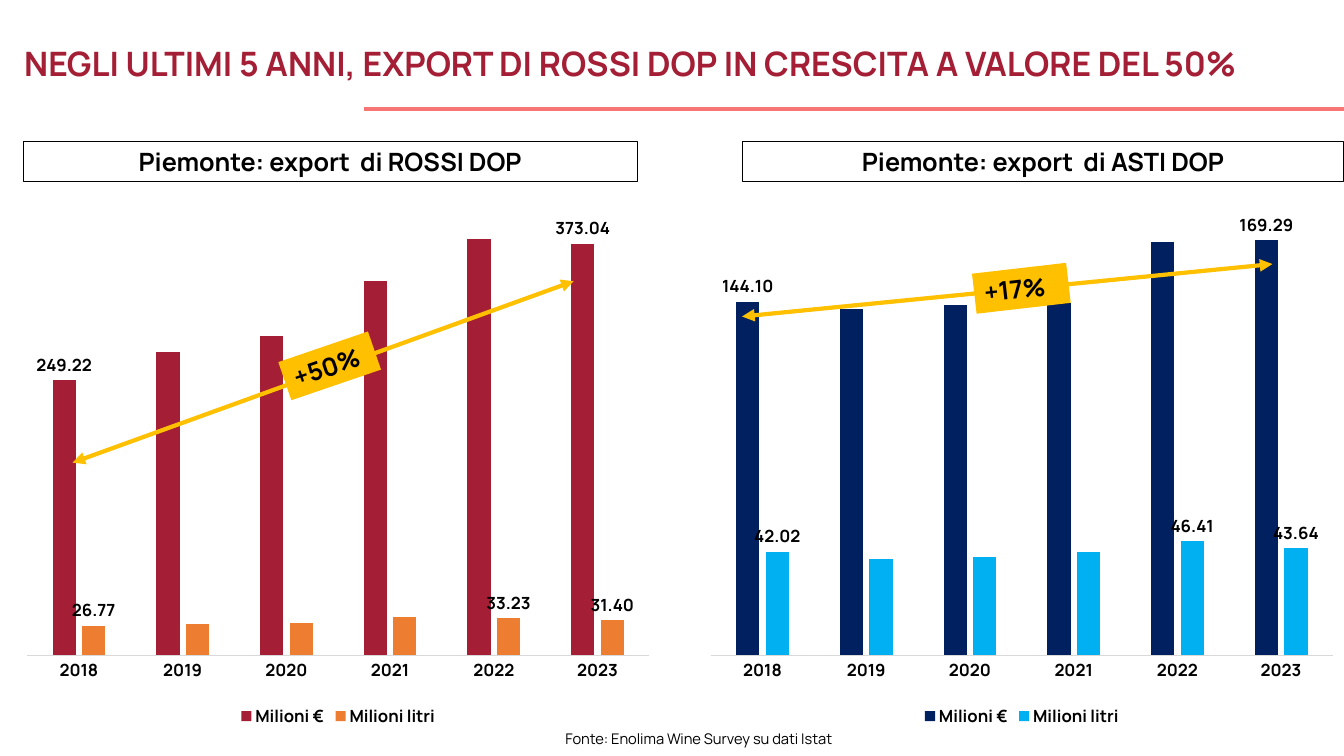
"""Build the slide comparing exports of Piedmont red and Asti DOP wines."""
from lxml.etree import SubElement, fromstring
from pptx import Presentation
from pptx.chart.data import CategoryChartData
from pptx.dml.color import RGBColor
from pptx.enum.chart import XL_CHART_TYPE as CT, XL_LABEL_POSITION as LP
from pptx.enum.chart import XL_LEGEND_POSITION as LegendPos, XL_TICK_MARK as Tick
from pptx.enum.shapes import MSO_CONNECTOR as Conn, MSO_SHAPE as Shape
from pptx.enum.text import MSO_ANCHOR as Anchor, PP_ALIGN as Align
from pptx.oxml.ns import qn
from pptx.util import Inches, Pt

COLORS = {"red": "A41F35", "orange": "ED7D31", "navy": "002060", "sky": "00B0F0",
          "rose": "F87575", "gold": "FFC000", "black": "000000", "grey": "D9D9D9"}
FONT = "Manrope"
TITLE = "NEGLI ULTIMI 5 ANNI, EXPORT DI ROSSI DOP IN CRESCITA A VALORE DEL 50%"
SOURCE = "Fonte: Enolima Wine Survey su dati Istat"
YEARS = ["2018", "2019", "2020", "2021", "2022", "2023"]
NAMES = ["Milioni €", "Milioni litri"]
LABELLED = [(0, 5), (0, 4, 5)]
PANELS = [
    {"heading": "Piemonte: export  di ROSSI DOP", "box": (0.23, 1.4, 6.09, 0.4),
     "chart_left": 0.14, "top_value": 400, "colors": ("red", "orange"),
     "values": [(249.22, 275.31, 289.18, 339.37, 377.71, 373.04),
                (26.77, 28.22, 29.55, 34.42, 33.23, 31.40)],
     "arrow": (0.72, 4.59, 5.69, 2.79),
     "growth": "+50%", "tag": (2.8, 3.43, 0.94, 0.4), "angle": 341.1},
    {"heading": "Piemonte: export  di ASTI DOP", "box": (7.36, 1.4, 5.97, 0.4),
     "chart_left": 6.92, "top_value": 180, "colors": ("navy", "sky"),
     "values": [(144.10, 141.31, 143.07, 143.74, 168.64, 169.29),
                (42.02, 39.27, 39.83, 42.13, 46.41, 43.64)],
     "arrow": (7.36, 3.14, 12.62, 2.62),
     "growth": "+17%", "tag": (9.66, 2.66, 0.94, 0.4), "angle": 353.4},
]
PLOT = {"x": 0.02, "y": 0.02, "w": 0.96, "h": 0.835}


def rgb(name):
    return RGBColor.from_string(COLORS[name])


def style(font, size, color="black", bold=True):
    font.name, font.size, font.bold = FONT, Pt(size), bold
    font.color.rgb = rgb(color)


def write(sp, text, size=18, color="black", bold=True, align=Align.LEFT,
          anchor=Anchor.MIDDLE, wrap=True):
    tf = sp.text_frame
    tf.word_wrap, tf.vertical_anchor = wrap, anchor
    p = tf.paragraphs[0]
    p.alignment = align
    r = p.add_run()
    r.text = text
    style(r.font, size, color, bold)


def add_rect(slide, place, fill=None, line=None):
    sp = slide.shapes.add_shape(Shape.RECTANGLE, *map(Inches, place))
    sp.shadow.inherit = False
    if fill:
        sp.fill.solid()
        sp.fill.fore_color.rgb = rgb(fill)
    else:
        sp.fill.background()
    if line:
        sp.line.color.rgb, sp.line.width = rgb(line), Pt(0)
    else:
        sp.line.fill.background()
    return sp


def add_line(slide, ends, color, arrows=False):
    cx = slide.shapes.add_connector(Conn.STRAIGHT, *map(Inches, ends))
    cx.line.color.rgb, cx.line.width = rgb(color), Pt(3)
    if arrows:
        ln = cx.line._get_or_add_ln()
        for end in ("a:headEnd", "a:tailEnd"):
            SubElement(ln, qn(end), type="triangle")
    SubElement(cx._element.spPr, qn("a:effectLst"))


def set_plot_layout(chart):
    area = chart._chartSpace.chart.plotArea
    for old in area.findall(qn("c:layout")):
        area.remove(old)
    sizes = "".join(f'<c:{k} val="{v}"/>' for k, v in PLOT.items())
    ns = "http://schemas.openxmlformats.org/drawingml/2006/chart"
    area.insert(0, fromstring(
        f'<c:layout xmlns:c="{ns}"><c:manualLayout><c:layoutTarget val="inner"/>'
        f'<c:xMode val="edge"/><c:yMode val="edge"/>{sizes}'
        '</c:manualLayout></c:layout>'))


def add_export_chart(slide, panel):
    data = CategoryChartData(number_format="0.00")
    data.categories = YEARS
    for name, values in zip(NAMES, panel["values"]):
        data.add_series(name, values)
    place = map(Inches, (panel["chart_left"], 2.02, 6.43, 5.24))
    chart = slide.shapes.add_chart(CT.COLUMN_CLUSTERED, *place, data).chart
    style(chart.font, 12)
    chart.has_title = False
    chart.has_legend = True
    chart.legend.position = LegendPos.BOTTOM
    chart.legend.include_in_layout = False
    style(chart.legend.font, 12)
    value_axis, cat_axis = chart.value_axis, chart.category_axis
    value_axis.minimum_scale, value_axis.maximum_scale = 0, panel["top_value"]
    value_axis.has_major_gridlines = False
    value_axis.visible = False
    cat_axis.major_tick_mark = Tick.NONE
    cat_axis.format.line.color.rgb = rgb("grey")
    cat_axis.format.line.width = Pt(0.75)
    style(cat_axis.tick_labels.font, 12)
    plot = chart.plots[0]
    plot.gap_width, plot.overlap, plot.vary_by_categories = 219, -27, False
    for ser, color, points in zip(plot.series, panel["colors"], LABELLED):
        ser.format.fill.solid()
        ser.format.fill.fore_color.rgb = rgb(color)
        ser.data_labels.show_value = False
        for i in points:
            label = ser.points[i].data_label
            style(label.font, 12)
            label.position = LP.OUTSIDE_END
    set_plot_layout(chart)


def main():
    prs = Presentation()
    prs.slide_width, prs.slide_height = Inches(13.33), Inches(7.5)
    slide = prs.slides.add_slide(prs.slide_layouts[5])
    add_line(slide, (3.61, 1.08, 13.33, 1.08), "rose")
    title = slide.shapes.title
    title.left, title.top, title.width, title.height = map(
        Inches, (0.14, 0.38, 13.06, 0.9))
    write(title, TITLE, size=24, color="red", anchor=Anchor.TOP)
    source = slide.shapes.add_textbox(*map(Inches, (5.51, 7.19, 3.29, 0.27)))
    write(source, SOURCE, size=10.5, bold=False, wrap=False)
    for panel in PANELS:
        box = add_rect(slide, panel["box"], line="black")
        write(box, panel["heading"], align=Align.CENTER)
        add_export_chart(slide, panel)
    for panel in PANELS:
        add_line(slide, panel["arrow"], "gold", arrows=True)
        tag = add_rect(slide, panel["tag"], fill="gold")
        tag.rotation = panel["angle"]
        write(tag, panel["growth"])
    prs.save("out.pptx")


if __name__ == "__main__":
    main()
